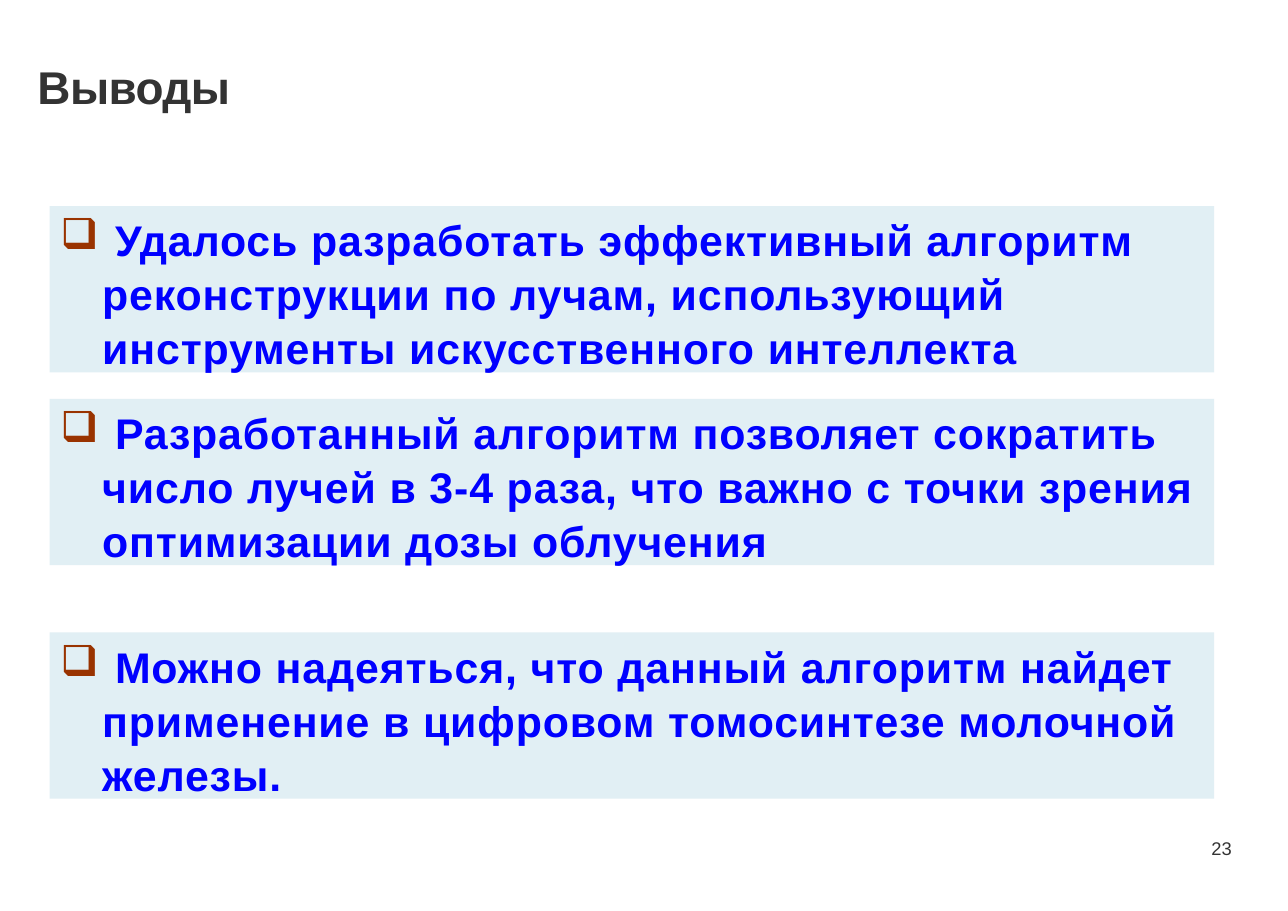
import pptx
import pptx.dml.color
import pptx.enum.shapes
import pptx.enum.text
import pptx.oxml
import pptx.oxml.ns
import pptx.util

TITLE = "Выводы"
PAGE_NUMBER = "23"
CONCLUSIONS = [
    # top in inches, text
    (1.87, " Удалось разработать эффективный алгоритм реконструкции по лучам, "
           "использующий инструменты искусственного интеллекта"),
    (3.62, " Разработанный алгоритм позволяет сократить число лучей в 3-4 раза, "
           "что важно с точки зрения оптимизации дозы облучения"),
    (5.74, " Можно надеяться, что данный алгоритм найдет применение в цифровом "
           "томосинтезе молочной железы."),
]
WIDTH, HEIGHT = 11.69, 8.27
PANEL_LEFT, PANEL_WIDTH, PANEL_HEIGHT = 0.45, 10.57, 1.51
INDENT = 0.38
GREY, BLUE, PANEL_FILL, BULLET_COLOR = "333333", "0000FF", "E1EFF4", "993300"

Inches, Pt = pptx.util.Inches, pptx.util.Pt
Align = pptx.enum.text.PP_ALIGN
Anchor = pptx.enum.text.MSO_ANCHOR


def rgb(value):
    return pptx.dml.color.RGBColor.from_string(value)


def write(frame, text, size, color, bold, align, line_spacing, tracking=0):
    """Fill the frame's only paragraph; tracking is in points."""
    frame.word_wrap = True
    paragraph = frame.paragraphs[0]
    run = paragraph.add_run()
    run.text = text
    if tracking:
        run.font._element.set("spc", str(round(tracking * 100)))
    paragraph.alignment = align
    paragraph.line_spacing = line_spacing
    paragraph.space_before = Pt(0)
    font = paragraph.font
    font.name, font.size, font.bold = "Arial", Pt(size), bold
    font.color.rgb = rgb(color)


def add_bullet(paragraph):
    properties = paragraph._p.get_or_add_pPr()
    properties.set("marL", str(Inches(INDENT)))
    properties.set("indent", str(-Inches(INDENT)))
    namespace = pptx.oxml.ns.nsdecls("a")
    for xml in (
        f'<a:buClr {namespace}><a:srgbClr val="{BULLET_COLOR}"/></a:buClr>',
        f'<a:buChar {namespace} char="❑"/>',
    ):
        properties.append(pptx.oxml.parse_xml(xml))


def set_margins(frame, top=0):
    frame.margin_left = frame.margin_right = frame.margin_bottom = 0
    frame.margin_top = Inches(top)


def add_title(slide):
    title = slide.shapes.title
    title.left, title.top = Inches(0.34), Inches(0.51)
    title.width, title.height = Inches(9.22), Inches(0.55)
    frame = title.text_frame
    frame.auto_size = pptx.enum.text.MSO_AUTO_SIZE.NONE
    set_margins(frame, top=0.08)
    frame.vertical_anchor = Anchor.MIDDLE
    write(frame, TITLE, 30, GREY, True, Align.LEFT, 0.8, -0.4)


def add_conclusion(slide, top, text):
    panel = slide.shapes.add_shape(
        pptx.enum.shapes.MSO_SHAPE.RECTANGLE,
        Inches(PANEL_LEFT), Inches(top), Inches(PANEL_WIDTH), Inches(PANEL_HEIGHT))
    panel.shadow.inherit = False
    panel.fill.solid()
    panel.fill.fore_color.rgb = rgb(PANEL_FILL)
    panel.line.fill.background()
    frame = panel.text_frame
    frame.vertical_anchor = Anchor.TOP
    add_bullet(frame.paragraphs[0])
    write(frame, text, 28, BLUE, True, Align.LEFT, 1.05, 0.6)


def add_page_number(slide):
    box = slide.shapes.add_textbox(Inches(10.68), Inches(7.56), Inches(0.5), Inches(0.24))
    set_margins(box.text_frame)
    box.text_frame.vertical_anchor = Anchor.BOTTOM
    write(box.text_frame, PAGE_NUMBER, 12, GREY, False, Align.RIGHT, 0.9)


def main():
    presentation = pptx.Presentation()
    presentation.slide_width, presentation.slide_height = Inches(WIDTH), Inches(HEIGHT)
    slide = presentation.slides.add_slide(presentation.slide_layouts[5])
    add_title(slide)
    for top, text in CONCLUSIONS:
        add_conclusion(slide, top, text)
    add_page_number(slide)
    presentation.save("out.pptx")


if __name__ == "__main__":
    main()
